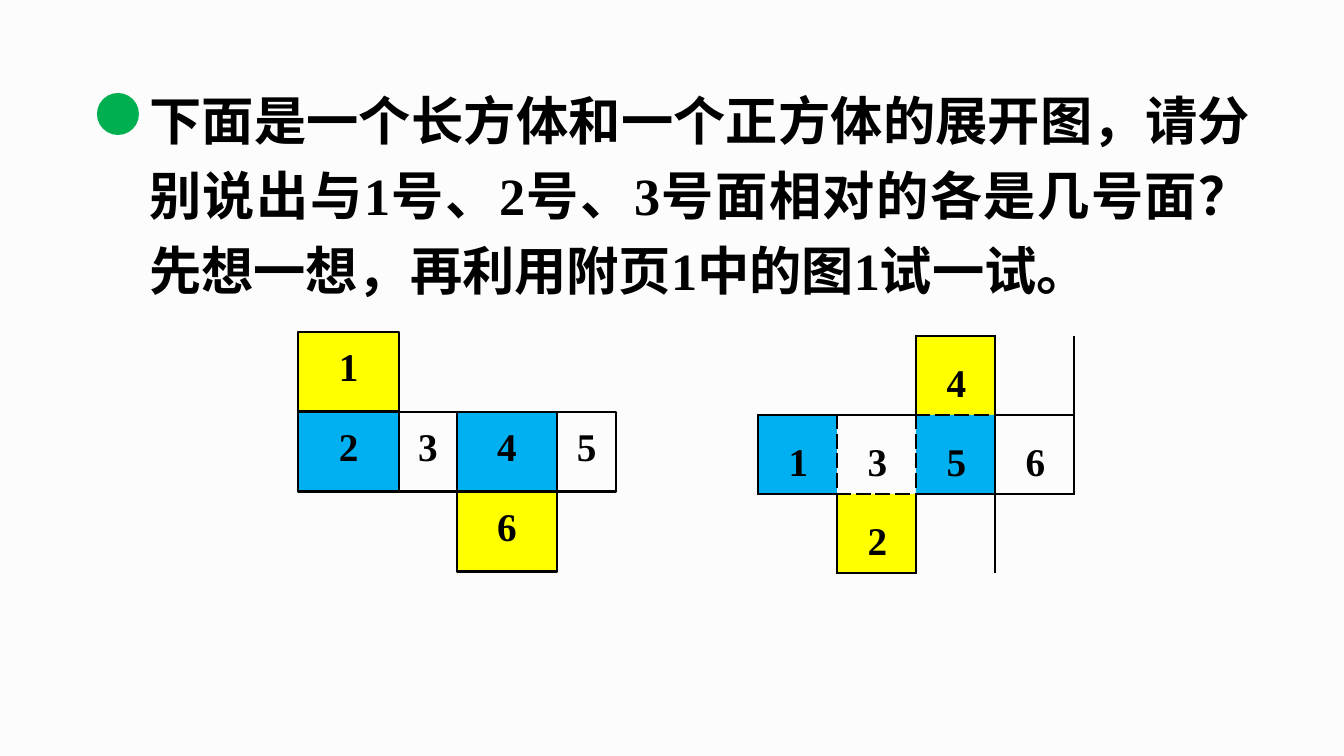
from lxml import etree
from pptx import Presentation
from pptx.dml.color import RGBColor
from pptx.enum.lang import MSO_LANGUAGE_ID
from pptx.enum.shapes import MSO_SHAPE
from pptx.enum.text import MSO_ANCHOR, PP_ALIGN
from pptx.oxml.ns import qn
from pptx.util import Pt

PX = 914400 / 134.4
RECTANGLE, OVAL = MSO_SHAPE.RECTANGLE, MSO_SHAPE.OVAL
CENTER, JUSTIFY = PP_ALIGN.CENTER, PP_ALIGN.JUSTIFY
TOP = MSO_ANCHOR.TOP
CHINESE = MSO_LANGUAGE_ID.SIMPLIFIED_CHINESE

FONT = "Times New Roman"
BLACK, BLUE, YELLOW, GREEN = "000000", "00B0F0", "FFFF00", "00B050"
BACKGROUND = "FCFCFC"
NO_STYLE_NO_GRID = "{2D5ABB26-0587-4C30-8999-92F81FD0307C}"

QUESTION = ("下面是一个长方体和一个正方体的展开图，请分别说出与1号、2号、3号面相对的"
            "各是几号面？先想一想，再利用附页1中的图1试一试。")

# Faces of each net: (row, column) -> (number, fill)
CUBOID_FACES = {(0, 0): ("1", YELLOW), (1, 0): ("2", BLUE), (1, 1): ("3", None),
                (1, 2): ("4", BLUE), (1, 3): ("5", None), (2, 2): ("6", YELLOW)}
CUBE_FACES = {(1, 0): ("1", BLUE), (2, 1): ("2", YELLOW), (1, 1): ("3", None),
              (0, 2): ("4", YELLOW), (1, 2): ("5", BLUE), (1, 3): ("6", None)}
CUBE_FOLDS = [{(1, 0), (1, 1)}, {(1, 1), (1, 2)}, {(0, 2), (1, 2)}, {(1, 1), (2, 1)}]
SIDES = {"a:lnL": (0, -1), "a:lnR": (0, 1), "a:lnT": (-1, 0), "a:lnB": (1, 0)}


def px(*lengths):
    return [round(length * PX) for length in lengths]


def color(hex_string):
    return RGBColor.from_string(hex_string)


def add_block(shapes, kind, box, fill=None, line=None):
    shape = shapes.add_shape(kind, *px(*box))
    shape.shadow.inherit = False
    if fill:
        shape.fill.solid()
        shape.fill.fore_color.rgb = color(fill)
    else:
        shape.fill.background()
    if line:
        shape.line.color.rgb = color(line)
        shape.line.width = Pt(1.5)
    else:
        shape.line.fill.background()
    return shape


def write(shape, text, size, alignment):
    frame = shape.text_frame
    frame.word_wrap = True
    frame.vertical_anchor = TOP
    paragraph = frame.paragraphs[0]
    paragraph.alignment = alignment
    run = paragraph.add_run()
    run.text = text
    run.font.name = FONT
    run.font.size = Pt(size)
    run.font.bold = True
    run.font.color.rgb = color(BLACK)
    run.font.language_id = CHINESE
    return paragraph


def write_number(shape, number):
    shape.text_frame.margin_top = px(10)[0]
    write(shape, number, 21, CENTER)


def add_question(slide, left, top, width, height):
    text_box = slide.shapes.add_textbox(*px(left, top, width, height))
    write(text_box, QUESTION, 28, JUSTIFY).line_spacing = 1.2
    add_block(slide.shapes, OVAL, (left - 39, top + 24, 42, 42), GREEN)


def add_cuboid_net(slide, left, top, widths, row_height):
    boxes = {(row, column): (left + sum(widths[:column]), top + row * row_height,
                             widths[column], row_height)
             for row, column in CUBOID_FACES}
    for place, (_, fill) in CUBOID_FACES.items():
        if fill:
            add_block(slide.shapes, RECTANGLE, boxes[place], fill)
    outlines = slide.shapes.add_group_shape().shapes
    for place, (number, _) in CUBOID_FACES.items():
        write_number(add_block(outlines, RECTANGLE, boxes[place], line=BLACK), number)


def add_border(cell, side, dash):
    properties = cell._tc.get_or_add_tcPr()
    line = etree.SubElement(properties, qn(side), w=str(Pt(1)))
    fill = etree.SubElement(line, qn("a:solidFill"))
    etree.SubElement(fill, qn("a:srgbClr"), val=BLACK)
    etree.SubElement(line, qn("a:prstDash"), val=dash)


def add_cube_grid(slide, left, top, edge):
    """Table whose lines outline the faces, dashed along the folds."""
    rows, columns = 3, 4
    frame = slide.shapes.add_table(
        rows, columns, *px(left, top, columns * edge, rows * edge))
    table = frame.table
    table.first_row = table.horz_banding = False
    table._tbl.tblPr.find(qn("a:tableStyleId")).text = NO_STYLE_NO_GRID
    for row in range(rows):
        for column in range(columns):
            cell = table.cell(row, column)
            place = (row, column)
            for side, (down, right) in SIDES.items():
                pair = {place, (row + down, column + right)}
                if pair & CUBE_FACES.keys():
                    add_border(cell, side, "dash" if pair in CUBE_FOLDS else "solid")
            cell.fill.background()
    table.cell(0, 0).merge(table.cell(0, 1))


def add_cube_net(slide, left, top, edge):
    corners = {(row, column): (left + column * edge, top + row * edge)
               for row, column in CUBE_FACES}
    for place, (_, fill) in CUBE_FACES.items():
        if fill:
            add_block(slide.shapes, RECTANGLE, (*corners[place], edge, edge), fill)
    add_cube_grid(slide, left, top, edge)
    for place, (number, _) in CUBE_FACES.items():
        x, y = corners[place]
        label = slide.shapes.add_textbox(*px(x + 11, y + 12, 59, 60))
        write_number(label, number)


def main():
    presentation = Presentation()
    presentation.slide_width, presentation.slide_height = px(1344, 756)
    slide = presentation.slides.add_slide(presentation.slide_layouts[6])
    slide.background.fill.solid()
    slide.background.fill.fore_color.rgb = color(BACKGROUND)
    add_question(slide, 136, 69, 1128, 242)
    add_cuboid_net(slide, 298, 332, [101, 58, 100, 59], 80)
    add_cube_net(slide, 758, 336, 79)
    presentation.save("out.pptx")


if __name__ == "__main__":
    main()
